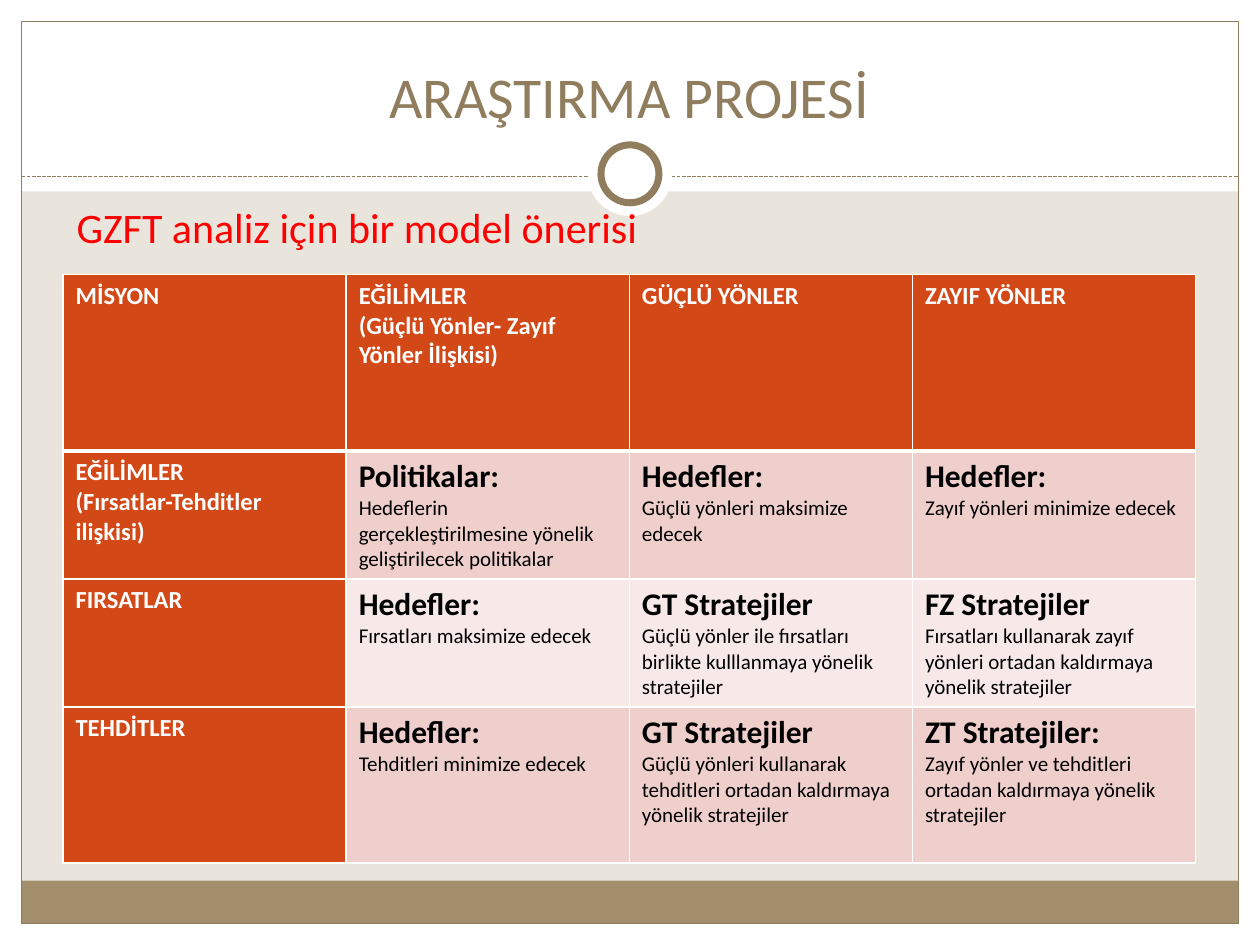
from dataclasses import dataclass

from lxml import etree
from pptx import Presentation
from pptx import util as u
from pptx.dml.color import RGBColor
from pptx.enum import dml, shapes, text
from pptx.oxml import ns


@dataclass(frozen=True)
class Theme:
    font: str = "Calibri"
    white: str = "FFFFFF"
    black: str = "000000"
    paper: str = "E9E5DC"
    tan: str = "A28E6A"
    brown: str = "8F7D5E"
    red: str = "FF0000"
    orange: str = "D34817"
    band_dark: str = "EFCFCC"
    band_light: str = "F7E9E8"
    title: int = 33
    subtitle: int = 24
    heading: int = 18
    label: int = 14
    detail: int = 12


THEME = Theme()

ROW_HEIGHTS = [1.4, 0.99, 0.96, 1.24]
MATRIX = [
    [
        ["MİSYON"],
        ["EĞİLİMLER", "(Güçlü Yönler- Zayıf Yönler İlişkisi)"],
        ["GÜÇLÜ YÖNLER"],
        ["ZAYIF YÖNLER"],
    ],
    [
        ["EĞİLİMLER", "(Fırsatlar-Tehditler ilişkisi)"],
        ["Politikalar:", "Hedeflerin gerçekleştirilmesine yönelik geliştirilecek politikalar"],
        ["Hedefler:", "Güçlü yönleri maksimize edecek"],
        ["Hedefler:", "Zayıf yönleri minimize edecek"],
    ],
    [
        ["FIRSATLAR"],
        ["Hedefler:", "Fırsatları maksimize edecek"],
        ["GT Stratejiler", "Güçlü yönler ile fırsatları birlikte kulllanmaya yönelik stratejiler"],
        ["FZ Stratejiler", "Fırsatları kullanarak zayıf yönleri ortadan kaldırmaya yönelik stratejiler"],
    ],
    [
        ["TEHDİTLER"],
        ["Hedefler:", "Tehditleri minimize edecek"],
        ["GT Stratejiler", "Güçlü yönleri kullanarak tehditleri ortadan kaldırmaya yönelik stratejiler"],
        ["ZT Stratejiler:", "Zayıf yönler ve tehditleri ortadan kaldırmaya yönelik stratejiler"],
    ],
]


def color(value):
    return RGBColor.from_string(value)


def inches(*lengths):
    return [u.Inches(length) for length in lengths]


def write(para, words, size, tint, bold=False):
    span = para.add_run()
    span.text = words
    formats = {"name": THEME.font, "size": u.Pt(size), "bold": bold}
    for name, value in formats.items():
        setattr(span.font, name, value)
    span.font.color.rgb = color(tint)


def add_figure(page, kind, box, fill=None, line=None, width=0.75):
    figure = page.shapes.add_shape(kind, *inches(*box))
    figure.shadow.inherit = False
    if fill:
        figure.fill.solid()
        figure.fill.fore_color.rgb = color(fill)
    else:
        figure.fill.background()
    if line:
        figure.line.color.rgb = color(line)
        figure.line.width = u.Pt(width)
    else:
        figure.line.fill.background()


def add_divider(page, left, right, top):
    divider = page.shapes.add_connector(
        shapes.MSO_CONNECTOR.STRAIGHT, *inches(left, top, right, top)
    )
    divider.line.color.rgb = color(THEME.brown)
    divider.line.width = u.Pt(0.75)
    divider.line.dash_style = dml.MSO_LINE.SQUARE_DOT
    etree.SubElement(divider._element.spPr, ns.qn("a:effectLst"))


def add_frame(page, box):
    left, top, width, height = box
    margin = 0.17
    right, bottom = left + width, top + height
    rectangle = shapes.MSO_SHAPE.RECTANGLE
    edges = [
        (left, bottom - margin, width, margin),
        (left, top, width, 1.52),
        (left, top, margin, height),
        (right - margin, top, margin, height),
    ]
    for edge in edges:
        add_figure(page, rectangle, edge, THEME.white)
    inner = width - 2 * margin
    add_figure(page, rectangle, (left + margin, bottom - 0.51, inner, 0.34), THEME.tan)
    outline = (left + margin, top + margin, inner, height - 2 * margin)
    add_figure(page, rectangle, outline, line=THEME.brown)
    add_divider(page, left + margin, right - margin, top + 1.4)
    center, middle = left + width / 2, top + 1.38
    for size, line in [(0.67, None), (0.46, THEME.brown)]:
        ring = (center - size / 2, middle - size / 2, size, size)
        add_figure(page, shapes.MSO_SHAPE.OVAL, ring, THEME.white, line, 4)


def add_text(page, box, words, size, tint, anchor, align):
    frame = page.shapes.add_textbox(*inches(*box)).text_frame
    formats = {
        "word_wrap": True,
        "auto_size": text.MSO_AUTO_SIZE.NONE,
        "vertical_anchor": anchor,
    }
    for name, value in formats.items():
        setattr(frame, name, value)
    para = frame.paragraphs[0]
    para.alignment = align
    write(para, words, size, tint)


def add_borders(cell, widths):
    properties = cell._tc.get_or_add_tcPr()
    for side, width in widths.items():
        border = etree.SubElement(properties, ns.qn(f"a:ln{side}"), w=str(u.Pt(width)))
        fill = etree.SubElement(border, ns.qn("a:solidFill"))
        etree.SubElement(fill, ns.qn("a:srgbClr"), val=THEME.white)


def fill_cell(cell, lines, row, column):
    is_label = row == 0 or column == 0
    add_borders(cell, {"L": 1, "R": 1, "T": 3 if row == 1 else 1, "B": 3 if row == 0 else 1})
    band = THEME.band_dark if row % 2 else THEME.band_light
    cell.fill.solid()
    cell.fill.fore_color.rgb = color(THEME.orange if is_label else band)
    frame = cell.text_frame
    for index, words in enumerate(lines):
        para = frame.add_paragraph() if index else frame.paragraphs[0]
        if is_label:
            write(para, words, THEME.label, THEME.white, True)
        else:
            size = THEME.detail if index else THEME.heading
            write(para, words, size, THEME.black, index == 0)


def add_matrix(page, box):
    holder = page.shapes.add_table(len(MATRIX), len(MATRIX[0]), *inches(*box))
    table = holder.table
    for row, height in zip(table.rows, ROW_HEIGHTS):
        row.height = u.Inches(height)
    holder.height = u.Inches(box[3])
    for row, entries in enumerate(MATRIX):
        for column, lines in enumerate(entries):
            fill_cell(table.cell(row, column), lines, row, column)


def main():
    deck = Presentation()
    deck.slide_width, deck.slide_height = inches(10, 7.5)
    page = deck.slides.add_slide(deck.slide_layouts[6])
    page.background.fill.solid()
    page.background.fill.fore_color.rgb = color(THEME.paper)
    add_frame(page, (0, 0, 10, 7.5))
    add_text(page, (0.33, 0.25, 9.33, 0.83), "ARAŞTIRMA PROJESİ", THEME.title,
             THEME.brown, text.MSO_ANCHOR.BOTTOM, text.PP_ALIGN.CENTER)
    add_matrix(page, (0.5, 2.18, 8.99, 4.73))
    add_text(page, (0.51, 1.55, 7.24, 0.5), "GZFT analiz için bir model önerisi", THEME.subtitle,
             THEME.red, text.MSO_ANCHOR.TOP, text.PP_ALIGN.LEFT)
    deck.save("out.pptx")


if __name__ == "__main__":
    main()
